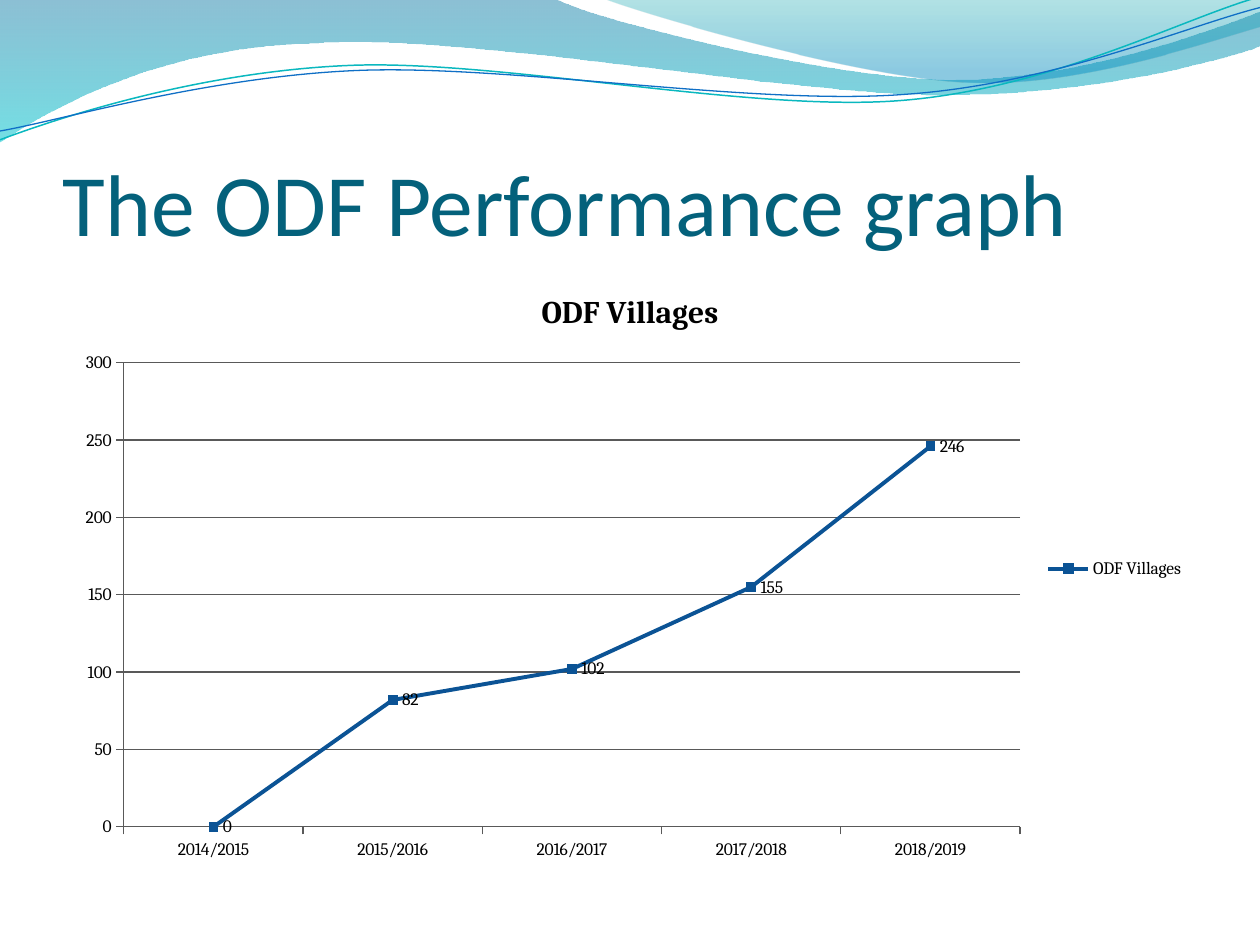
from dataclasses import dataclass
from typing import Any, Optional

import pptx
import pptx.chart.data
import pptx.dml.color
import pptx.enum.chart
import pptx.enum.text
import pptx.oxml
import pptx.oxml.ns
import pptx.util

Cm = pptx.util.Cm
Pt = pptx.util.Pt
RGBColor = pptx.dml.color.RGBColor
Chart = pptx.enum.chart
qn = pptx.oxml.ns.qn

TITLE_TEAL = RGBColor(0x04, 0x61, 0x7B)
BAND_BLUE = RGBColor(0x00, 0x74, 0xA1)
BAND_CYAN = RGBColor(0x00, 0xC6, 0xCF)
CREST_TEAL = RGBColor(0x00, 0xA1, 0xA9)
CREST_BLUE = RGBColor(0x00, 0x8B, 0xBF)
LINE_TEAL = RGBColor(0x0A, 0xB8, 0xBF)
LINE_BLUE = RGBColor(0x0F, 0x6F, 0xC6)
SERIES_BLUE = RGBColor(0x0B, 0x53, 0x95)
GRID_GRAY = RGBColor(0x59, 0x59, 0x59)
BLACK = RGBColor(0, 0, 0)

CM_PER_INCH = 2.54


@dataclass
class Stop:
    position: float
    color: RGBColor
    opacity: int


@dataclass
class Wave:
    """Inch points: two numbers are a corner, six are a Bezier curve."""
    start: tuple[float, float]
    segments: list[tuple[float, ...]]
    stops: tuple[Stop, ...] = ()
    line_color: Optional[RGBColor] = None
    line_width: float = 0


WAVES = [
    Wave((0, 0), [
        (4.4, -0.01),
        (4.76, 0.17, 6.64, 0.63, 7.58, 0.63),
        (8.53, 0.63, 9.58, 0.26, 10, 0.09),
        (10.01, 0.36),
        (9.83, 0.44, 8.7, 0.76, 7.46, 0.75),
        (6.22, 0.75, 3.82, 0.28, 2.57, 0.34),
        (1.29, 0.36, 0.46, 0.83, -0.01, 1.13),
    ], stops=(Stop(0, BAND_BLUE, 45), Stop(1, BAND_CYAN, 55))),
    Wave((4.79, -0.01), [
        (5.09, 0.11, 6.82, 0.62, 7.69, 0.65),
        (8.56, 0.69, 9.61, 0.32, 10, 0.21),
        (10, 0),
    ], stops=(Stop(0, CREST_TEAL, 30), Stop(0.8, CREST_BLUE, 45))),
    Wave((0, 1.11), [
        (0.48, 0.93, 1.58, 0.57, 2.77, 0.52),
        (3.95, 0.47, 5.93, 0.89, 7.13, 0.8),
        (8.33, 0.71, 9.38, 0.15, 9.98, -0.02),
    ], line_color=LINE_TEAL, line_width=0.85),
    Wave((0, 1.04), [
        (0.47, 0.96, 1.64, 0.61, 2.83, 0.56),
        (4.03, 0.51, 5.97, 0.84, 7.17, 0.75),
        (8.36, 0.67, 9.41, 0.21, 10, 0.06),
    ], line_color=LINE_BLUE, line_width=0.75),
]


def apply_format(target: Any, values: dict[str, Any]) -> None:
    for name, value in values.items():
        setattr(target, name, value)


def slide_points(numbers: tuple[float, ...]) -> list[tuple[int, int]]:
    lengths = [Cm(number * CM_PER_INCH) for number in numbers]
    return list(zip(lengths[::2], lengths[1::2]))


def bend_curves(shape: Any, segments: list[tuple[float, ...]]) -> None:
    """Join the three lines of each curve into one cubic Bezier."""
    lines = iter(list(shape.element.spPr.iter(qn("a:lnTo"))))
    for segment in segments:
        curve = next(lines)
        if len(segment) == 2:
            continue
        curve.tag = qn("a:cubicBezTo")
        for line in (next(lines), next(lines)):
            curve.append(line[0])
            line.getparent().remove(line)


def draw_wave(slide: Any, wave: Wave) -> None:
    builder = slide.shapes.build_freeform(*slide_points(wave.start)[0])
    points = [point for segment in wave.segments for point in slide_points(segment)]
    builder.add_line_segments(points, close=bool(wave.stops))
    shape = builder.convert_to_shape()
    bend_curves(shape, wave.segments)
    shape.shadow.inherit = False
    if not wave.stops:
        shape.fill.background()
        shape.line.color.rgb = wave.line_color
        shape.line.width = Pt(wave.line_width)
        return
    shape.line.fill.background()
    shape.fill.gradient()
    shape.fill.gradient_angle = 270
    for gradient_stop, stop in zip(shape.fill.gradient_stops, wave.stops):
        gradient_stop.position = stop.position
        gradient_stop.color.rgb = stop.color
    # Transparency of each gradient stop
    colors = list(shape.element.spPr.iter(qn("a:srgbClr")))
    for color, stop in zip(colors, wave.stops):
        alpha = pptx.oxml.parse_xml(
            f'<a:alpha {pptx.oxml.ns.nsdecls("a")} val="{stop.opacity * 1000}"/>')
        color.append(alpha)


def draw_title(slide: Any, text: str) -> None:
    box = slide.shapes.add_textbox(Cm(1.27), Cm(1.95), Cm(22.86), Cm(3.18))
    apply_format(box.text_frame, {
        "word_wrap": True, "vertical_anchor": pptx.enum.text.MSO_ANCHOR.BOTTOM,
        "margin_left": 0, "margin_right": 0,
        "margin_top": Cm(0.13), "margin_bottom": 0})
    run = box.text_frame.paragraphs[0].add_run()
    run.text = text
    apply_format(run.font, {"name": "Calibri", "size": Pt(50)})
    run.font.color.rgb = TITLE_TEAL


def draw_chart(slide: Any, name: str, villages: dict[str, int]) -> None:
    data = pptx.chart.data.CategoryChartData()
    data.categories = list(villages)
    data.add_series(name, list(villages.values()))
    chart = slide.shapes.add_chart(
        Chart.XL_CHART_TYPE.LINE_MARKERS_STACKED,
        Cm(1.27), Cm(5.37), Cm(22.86), Cm(12.19), data).chart
    apply_format(chart.font, {"name": "Cambria", "size": Pt(10)})
    chart.font.color.rgb = BLACK

    # Chart title and legend
    chart.has_title = True
    chart.chart_title.include_in_layout = False
    title_frame = chart.chart_title.text_frame
    title_frame.text = name
    title_font = title_frame.paragraphs[0].runs[0].font
    apply_format(title_font, {"name": "Cambria", "size": Pt(18), "bold": True})
    title_font.color.rgb = BLACK
    chart.has_legend = True
    apply_format(chart.legend, {
        "position": Chart.XL_LEGEND_POSITION.RIGHT, "include_in_layout": False})

    # Axes
    chart.value_axis.has_major_gridlines = True
    for axis in (chart.category_axis, chart.value_axis):
        axis.major_tick_mark = Chart.XL_TICK_MARK.OUTSIDE
    for part in (chart.category_axis, chart.value_axis,
                 chart.value_axis.major_gridlines):
        part.format.line.color.rgb = GRID_GRAY
        part.format.line.width = Pt(0.75)

    # Series with markers and value labels
    chart.plots[0].vary_by_categories = False
    series = chart.plots[0].series[0]
    series.smooth = False
    series.format.line.color.rgb = SERIES_BLUE
    series.format.line.width = Pt(2.25)
    apply_format(series.marker, {
        "style": Chart.XL_MARKER_STYLE.SQUARE, "size": 5})
    series.marker.format.fill.solid()
    series.marker.format.fill.fore_color.rgb = SERIES_BLUE
    series.marker.format.line.color.rgb = SERIES_BLUE
    apply_format(series.data_labels, {
        "show_value": True, "position": Chart.XL_LABEL_POSITION.RIGHT})


def main() -> None:
    presentation = pptx.Presentation()
    apply_format(presentation, {"slide_width": Cm(25.4), "slide_height": Cm(19.05)})
    slide = presentation.slides.add_slide(presentation.slide_layouts[6])
    for wave in WAVES:
        draw_wave(slide, wave)
    draw_title(slide, "The ODF Performance graph")
    draw_chart(slide, "ODF Villages", {
        "2014/2015": 0, "2015/2016": 82, "2016/2017": 102,
        "2017/2018": 155, "2018/2019": 246})
    presentation.save("out.pptx")


if __name__ == "__main__":
    main()
